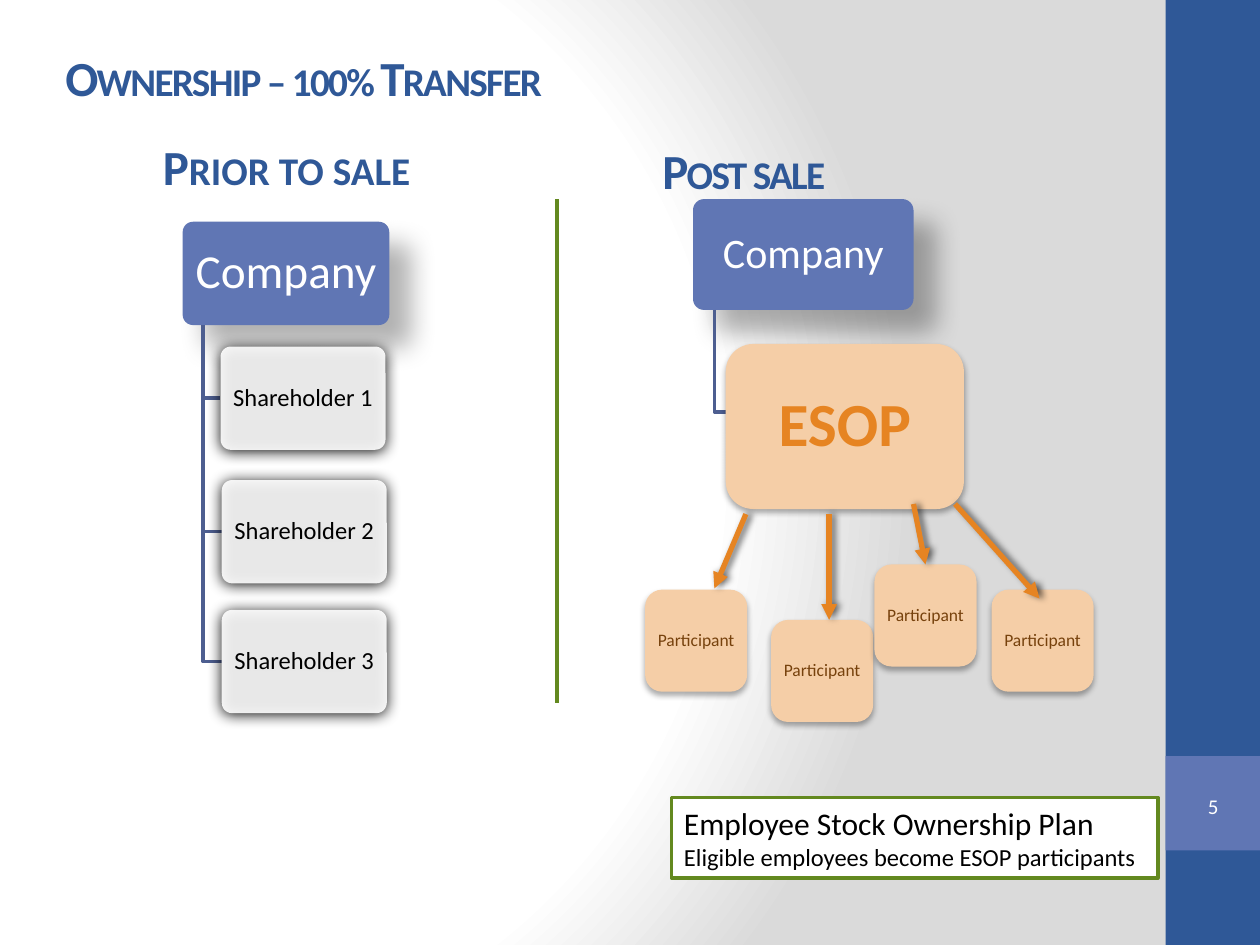
from dataclasses import dataclass

from lxml.etree import SubElement
from pptx import Presentation
from pptx.dml.color import RGBColor
from pptx.enum.shapes import MSO_CONNECTOR as Link, MSO_SHAPE as Kind
from pptx.enum.text import MSO_ANCHOR as Anchor, MSO_AUTO_SIZE as AutoSize, PP_ALIGN as Align
from pptx.oxml import parse_xml
from pptx.oxml.ns import nsdecls, qn
from pptx.util import Inches, Pt


@dataclass(frozen=True)
class Theme:
    font: str = "Calibri"
    navy: str = "2F5897"
    blue: str = "6076B4"
    branch: str = "4D5E90"
    green: str = "63891F"
    orange: str = "E68422"
    peach: str = "F5CEA7"
    brown: str = "77420D"
    white: str = "FFFFFF"
    gray: str = "DADADA"
    black: str = "000000"
    heading: int = 28
    plan: int = 18
    body: int = 14
    number: int = 12
    small: int = 10
    # Shadows: opacity in percent, blur and distance in points, angle
    company_shadow: tuple = (30, 15, 18, 45)
    holder_shadow: tuple = (100, 8.5, 1, 90)
    esop_shadow: tuple = (32, 3.5, 2.2, 90)
    arrow_shadow: tuple = (60, 4, 2, 0)


THEME = Theme()


def color(code):
    return RGBColor.from_string(code)


def set_shadow(shape, shadow=None):
    """Give a shape or connector its own shadow, or none."""
    effects = SubElement(shape.element.spPr, qn("a:effectLst"))
    if shadow:
        alpha, blur, distance, angle = shadow
        outer = SubElement(effects, qn("a:outerShdw"), blurRad=str(Pt(blur)), dist=str(Pt(distance)),
                           dir=str(angle * 60000), algn="ctr", rotWithShape="0")
        tint = SubElement(outer, qn("a:srgbClr"), val=THEME.black)
        SubElement(tint, qn("a:alpha"), val=str(alpha * 1000))


def set_line(shape, code, width):
    shape.line.color.rgb = color(code)
    shape.line.width = Pt(width)


def write(shape, lines, code, bold=False, align=Align.CENTER, anchor=Anchor.MIDDLE,
          inset=None, spacing=None):
    """Fill a shape with (text, size) lines."""
    frame = shape.text_frame
    frame.word_wrap = True
    frame.vertical_anchor = anchor
    if inset is not None:
        frame.margin_left = frame.margin_right = Inches(inset)
        frame.margin_top = frame.margin_bottom = Inches(inset)
    for index, (text, size) in enumerate(lines):
        para = frame.paragraphs[0] if index == 0 else frame.add_paragraph()
        para.text = text
        para.alignment = align
        para.line_spacing = spacing
        para.font.name = THEME.font
        para.font.size = Pt(size)
        para.font.bold = bold
        para.font.color.rgb = color(code)


def add_box(page, kind, place, fill=None, line=None, shadow=None, corner=None, opacity=None):
    box = page.shapes.add_shape(kind, *map(Inches, place))
    if corner is not None:
        box.adjustments[0] = corner
    if fill:
        box.fill.solid()
        box.fill.fore_color.rgb = color(fill)
    else:
        box.fill.background()
    if opacity:
        tint = box.element.spPr.find(qn("a:solidFill")).find(qn("a:srgbClr"))
        SubElement(tint, qn("a:alpha"), val=str(opacity * 1000))
    if line:
        set_line(box, line, 2)
    else:
        box.line.fill.background()
    set_shadow(box, shadow)
    return box


def add_heading(page, text, place, tracking=None, align=Align.LEFT, spacing=None):
    """Bold small-caps heading, with letter spacing in points."""
    box = page.shapes.add_textbox(*map(Inches, place))
    write(box, [(text, THEME.heading)], THEME.navy, bold=True, align=align, spacing=spacing)
    props = box.text_frame.paragraphs[0].runs[0].font
    span = box.text_frame.paragraphs[0].runs[0]._r.get_or_add_rPr()
    props.bold = True
    span.set("cap", "small")
    if tracking:
        span.set("spc", str(tracking * 100))


def add_company(page, place, size):
    box = add_box(page, Kind.ROUNDED_RECTANGLE, place, THEME.blue,
                  shadow=THEME.company_shadow, corner=0.1)
    write(box, [("Company", size)], THEME.white, inset=0.06, spacing=0.9)


def add_holder(page, text, left, top):
    box = add_box(page, Kind.ROUNDED_RECTANGLE, (left, top, 1.31, 0.82), THEME.white,
                  shadow=THEME.holder_shadow, corner=0.1, opacity=90)
    write(box, [(text, THEME.body)], THEME.black, inset=0.04, spacing=0.9)


def add_esop_box(page, text, place, size, code, bold=False):
    box = add_box(page, Kind.ROUNDED_RECTANGLE, place, THEME.peach, shadow=THEME.esop_shadow)
    write(box, [(text, size)], code, bold=bold, inset=0.06, spacing=0.9)
    return box


def add_branch(page, left, top, right, bottom):
    """Elbow that runs down and then right."""
    builder = page.shapes.build_freeform(Inches(left), Inches(top))
    builder.add_line_segments([(Inches(left), Inches(bottom)), (Inches(right), Inches(bottom))],
                              close=False)
    branch = builder.convert_to_shape()
    branch.fill.background()
    set_line(branch, THEME.branch, 2)
    set_shadow(branch)


def add_line(page, start, end, code, width, shadow=None, arrow=False):
    line = page.shapes.add_connector(Link.STRAIGHT, *map(Inches, start + end))
    set_line(line, code, width)
    if arrow:
        SubElement(line.element.spPr.find(qn("a:ln")), qn("a:tailEnd"), type="triangle")
    set_shadow(line, shadow)
    return line


def set_background(page):
    stops = "".join(f'<a:gs pos="{place * 1000}"><a:srgbClr val="{code}"/></a:gs>'
                    for place, code in ((0, THEME.white), (75, THEME.white), (100, THEME.gray)))
    page.element.cSld.insert(0, parse_xml(
        f'<p:bg {nsdecls("p", "a")}><p:bgPr><a:gradFill rotWithShape="1"><a:gsLst>{stops}</a:gsLst>'
        '<a:path path="circle"><a:fillToRect l="20000" t="50000" r="100000" b="50000"/></a:path>'
        '</a:gradFill><a:effectLst/></p:bgPr></p:bg>'))


def add_side_band(page):
    add_box(page, Kind.RECTANGLE, (9.25, 0, 0.75, 7.5), THEME.navy)
    add_box(page, Kind.RECTANGLE, (9.25, 6, 0.75, 0.75), THEME.blue)
    number = add_box(page, Kind.DOUBLE_BRACKET, (9.33, 6.18, 0.6, 0.43), corner=0.18)
    write(number, [("5", THEME.number)], THEME.white, inset=0)


def add_prior_side(page):
    add_heading(page, "Prior to sale", (0.65, 0.95, 3.25, 0.79), align=Align.CENTER, spacing=0.9)
    add_company(page, (1.45, 1.76, 1.64, 0.82), 27)
    for index, (left, top) in enumerate([(1.75, 2.75), (1.76, 3.81), (1.76, 4.84)], 1):
        add_branch(page, 1.61, 2.58, left, top + 0.41)
        add_holder(page, f"Shareholder {index}", left, top)


def add_post_side(page):
    add_heading(page, "Post sale", (5.16, 0.72, 8.33, 1.25), tracking=-1)
    add_company(page, (5.5, 1.58, 1.75, 0.88), 24)
    add_branch(page, 5.67, 2.46, 5.85, 3.27)
    add_esop_box(page, "ESOP", (5.76, 2.73, 1.89, 1.31), 35, THEME.orange, bold=True)
    people = [add_esop_box(page, "Participant", (left, top, 0.81, 0.81), THEME.small, THEME.brown)
              for left, top in ((5.12, 4.68), (6.12, 4.92), (6.94, 4.48), (7.87, 4.68))]
    arrows = [add_line(page, start, end, THEME.orange, 3, THEME.arrow_shadow, arrow=True)
              for start, end in (((5.92, 4.08), (5.67, 4.67)), ((6.58, 4.08), (6.58, 4.92)),
                                 ((7.25, 4), (7.33, 4.5)), ((7.58, 4), (8.25, 4.75)))]
    arrows[2].end_connect(people[2], 0)


def add_plan_note(page):
    note = add_box(page, Kind.RECTANGLE, (5.33, 6.33, 3.86, 0.64), THEME.white, THEME.green)
    write(note, [("Employee Stock Ownership Plan", THEME.plan),
                 ("Eligible employees become ESOP participants", THEME.body)],
          THEME.black, align=Align.LEFT, anchor=Anchor.TOP)
    note.text_frame.auto_size = AutoSize.SHAPE_TO_FIT_TEXT


def main():
    deck = Presentation()
    deck.slide_width, deck.slide_height = Inches(10), Inches(7.5)
    page = deck.slides.add_slide(deck.slide_layouts[6])
    set_background(page)
    add_side_band(page)
    add_heading(page, "Ownership – 100% Transfer", (0.42, 0.33, 9, 0.56), tracking=-1)
    add_line(page, (4.42, 1.58), (4.42, 5.58), THEME.green, 2)
    add_plan_note(page)
    add_prior_side(page)
    add_post_side(page)
    deck.save("out.pptx")


if __name__ == "__main__":
    main()
